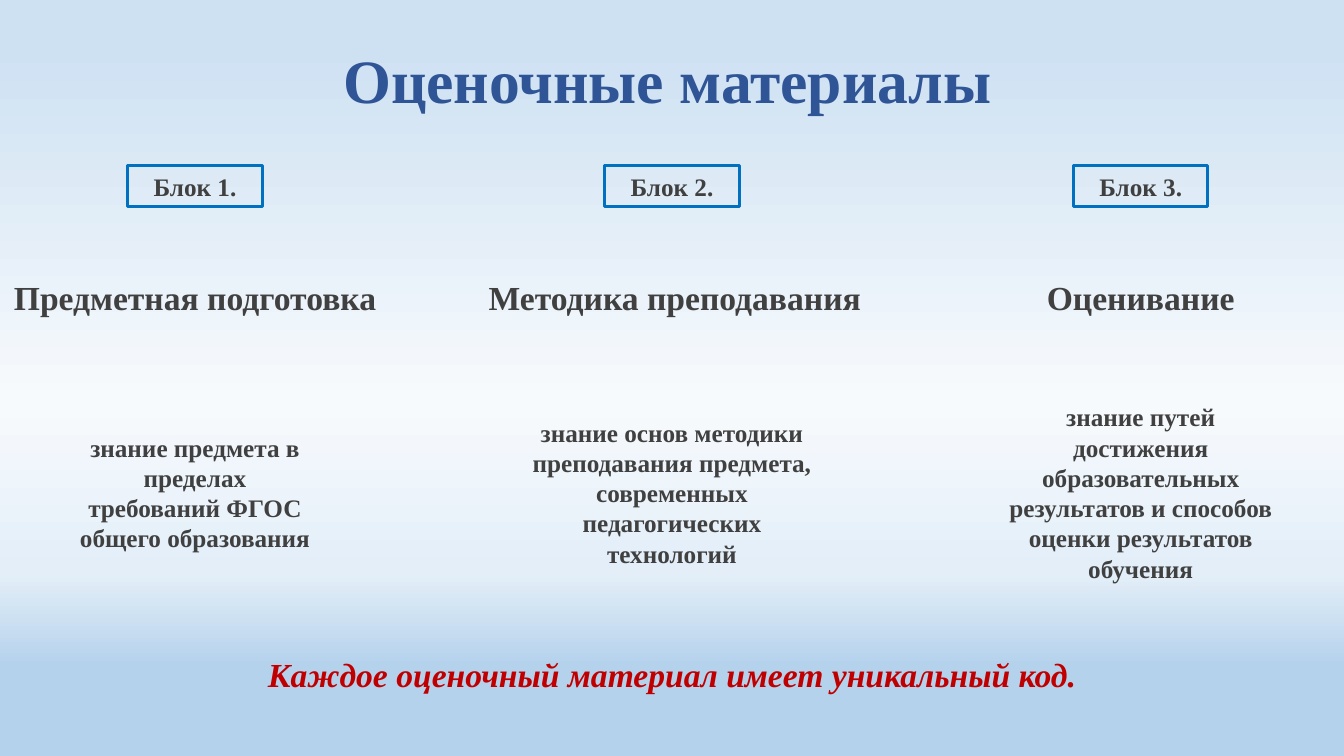
"""Build a slide on assessment materials: three blocks and a closing statement."""
from lxml import etree
from pptx import Presentation, util as u
from pptx.dml.color import RGBColor
from pptx.enum import shapes, text
from pptx.oxml.ns import qn

THEME = {
    "font": "Times New Roman",
    "title": {"size": 44, "color": "2F5597", "bold": True},
    "heading": {"size": 24, "color": "404040", "bold": True},
    "body": {"size": 18, "color": "404040", "bold": True},
    "closing": {"size": 24, "color": "C00000", "bold": True, "italic": True},
    "border": "0070C0",
    "background": [(6, "CEE1F2"), (53, "F7FAFD"), (76, "E3EEF8"), (88, "B5D2EC")],
}


def write(box, words, style):
    """Put one centred, styled paragraph into a box."""
    frame = box.text_frame
    frame.word_wrap = True
    frame.auto_size = text.MSO_AUTO_SIZE.NONE
    frame.vertical_anchor = text.MSO_ANCHOR.MIDDLE
    para = frame.paragraphs[0]
    para.alignment = text.PP_ALIGN.CENTER
    span = para.add_run()
    span.text = words
    values = dict(THEME[style], name=THEME["font"])
    span.font.color.rgb = RGBColor.from_string(values.pop("color"))
    values["size"] = u.Pt(values["size"])
    for name, value in values.items():
        setattr(span.font, name, value)
    return para


def place(center, middle, width, height):
    """Return left, top, width and height around a centre point."""
    return [u.Pt(n) for n in (center - width / 2, middle - height / 2, width, height)]


deck = Presentation()
deck.slide_width, deck.slide_height = u.Pt(960), u.Pt(540)
page = deck.slides.add_slide(deck.slide_layouts[5])

fill = page.background.fill
fill.gradient()
fill.gradient_angle = 270
stops = page.element.find(".//" + qn("a:gsLst"))
for stop in list(stops):
    stops.remove(stop)
for percent, color in THEME["background"]:
    stop = etree.SubElement(stops, qn("a:gs"), pos=str(percent * 1000))
    etree.SubElement(stop, qn("a:srgbClr"), val=color)

title = page.shapes.title
title.left, title.top, title.width, title.height = place(482.5, 59.8, 885.6, 62)
write(title, "Оценочные материалы ", "title").line_spacing = 0.9

blocks = [
    (139.3, "Предметная подготовка", 139.3, 278.6,
     "знание предмета в пределах требований ФГОС общего образования", 182.6, 4),
    (480, "Методика преподавания", 482, 285.8,
     "знание основ методики преподавания предмета, современных педагогических технологий", 235.4, 5),
    (814.8, "Оценивание", 814.8, 190.8,
     "знание путей достижения образовательных результатов и способов оценки результатов обучения", 220.3, 6),
]
for number, block in enumerate(blocks, 1):
    center, heading, heading_center, heading_width, body, body_width, lines = block
    label = page.shapes.add_shape(shapes.MSO_SHAPE.RECTANGLE, *place(center, 133, 96, 29))
    label.shadow.inherit = False
    label.fill.background()
    label.line.color.rgb = RGBColor.from_string(THEME["border"])
    label.line.width = u.Pt(2.25)
    write(label, f"Блок {number}.", "body")
    write(page.shapes.add_textbox(*place(heading_center, 212, heading_width, 36)), heading, "heading")
    write(page.shapes.add_textbox(*place(center, 351.8, body_width, 7.2 + 21.8 * lines)), body, "body")

closing = page.shapes.add_textbox(*place(480, 481.8, 820, 36))
write(closing, "Каждое оценочный материал имеет уникальный код.", "closing")

deck.save("out.pptx")
